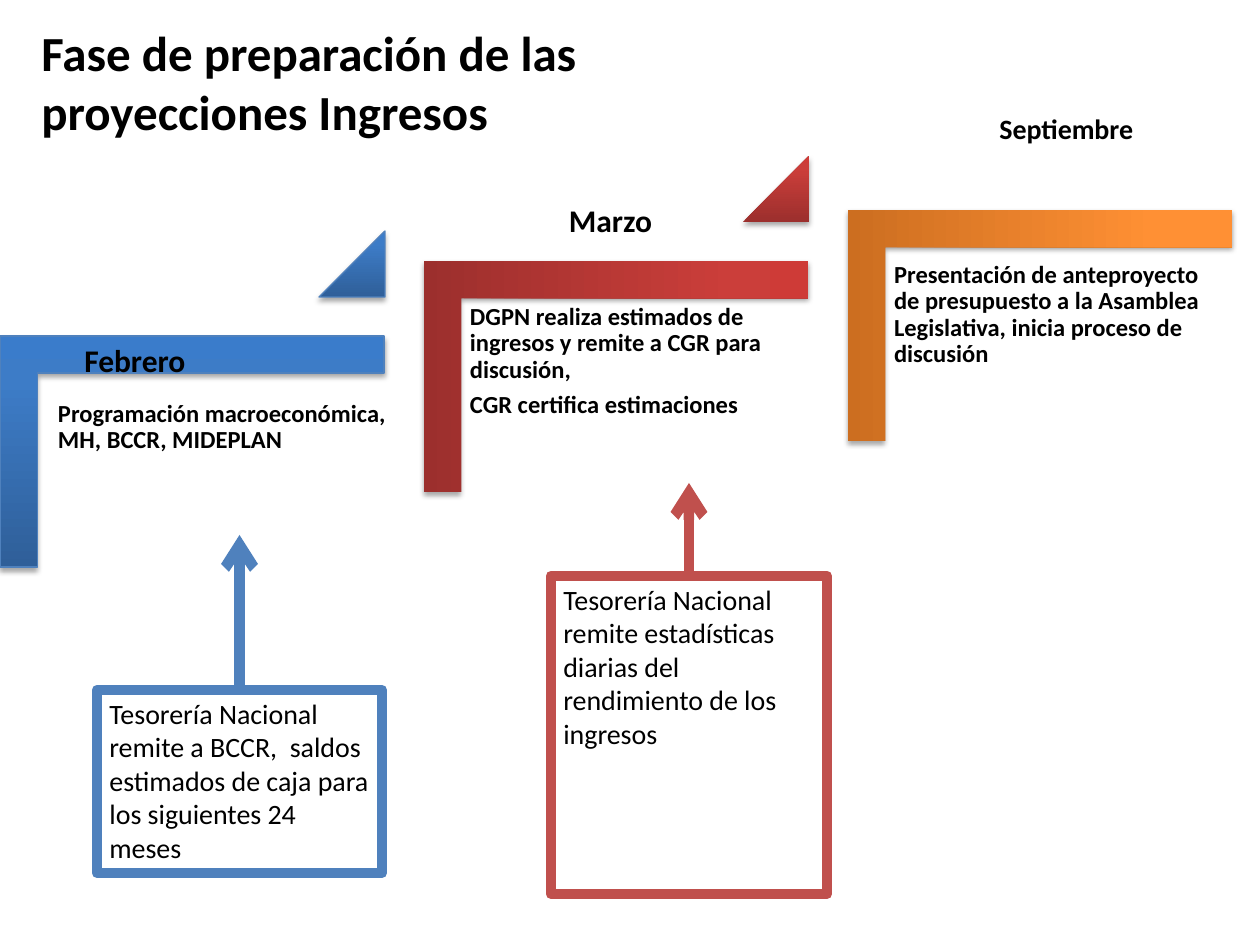
from copy import deepcopy
from dataclasses import dataclass

from lxml import etree
from pptx import Presentation
from pptx.dml.color import RGBColor
from pptx.enum.shapes import MSO_CONNECTOR, MSO_SHAPE
from pptx.enum.text import MSO_ANCHOR, PP_ALIGN
from pptx.oxml.ns import qn
from pptx.util import Emu, Pt

RECTANGLE = MSO_SHAPE.RECTANGLE
CORNER = MSO_SHAPE.CORNER
TRIANGLE = MSO_SHAPE.ISOSCELES_TRIANGLE
STRAIGHT = MSO_CONNECTOR.STRAIGHT
TOP = MSO_ANCHOR.TOP
LEFT, CENTER = PP_ALIGN.LEFT, PP_ALIGN.CENTER
EMU_PER_PX = 914400 / 126


@dataclass(frozen=True)
class Theme:
    font: str = "Calibri"
    ink: str = "000000"
    paper: str = "FFFFFF"
    blue: str = "4F81BD"
    red: str = "C0504D"
    blue_ramp: tuple = ("2F5F99", "3D7CC7", "3A7CCB")
    red_ramp: tuple = ("9C2F2D", "CB3E3A", "CE3B37")
    orange_ramp: tuple = ("CC6E20", "FF9034", "FF9136")
    title: int = 28
    heading: int = 18
    note: int = 16
    body: int = 14


THEME = Theme()
RAMP_POSITIONS = (0, 0.8, 1)
STEP_PITCH, STEP_WIDTH, STEP_HEIGHT = 424, 384, 231


def px(value):
    return Emu(round(value * EMU_PER_PX))


def color(value):
    return RGBColor.from_string(value)


def write_text(shape, text, size, bold=False, align=LEFT, inset=None,
               line_spacing=None, space_after=0):
    frame = shape.text_frame
    frame.word_wrap = True
    frame.vertical_anchor = TOP
    if inset is not None:
        frame.margin_left = frame.margin_right = px(inset)
        frame.margin_top = frame.margin_bottom = px(inset)
    for index, line in enumerate(text.split("\n")):
        para = frame.add_paragraph() if index else frame.paragraphs[0]
        para.alignment = align
        para.line_spacing = line_spacing
        para.space_after = Pt(space_after)
        span = para.add_run()
        span.text = line
        span.font.name = THEME.font
        span.font.size = Pt(size)
        span.font.bold = bold
        span.font.color.rgb = color(THEME.ink)


def add_text(page, box, text, size, **text_format):
    shape = page.shapes.add_textbox(*map(px, box))
    write_text(shape, text, size, **text_format)


def add_soft_shadow(shape):
    shape.shadow.inherit = False
    effects = shape._element.spPr.find(qn("a:effectLst"))
    shadow = etree.SubElement(effects, qn("a:outerShdw"), blurRad=str(Pt(3.1)),
                              dist=str(Pt(1.8)), dir="5400000", rotWithShape="0")
    tint = etree.SubElement(shadow, qn("a:srgbClr"), val=THEME.ink)
    etree.SubElement(tint, qn("a:alpha"), val="35000")


def add_ramp_shape(page, kind, box, ramp, outline, adjustments, rotation=0):
    shape = page.shapes.add_shape(kind, *map(px, box))
    shape.rotation = rotation
    for index, value in enumerate(adjustments):
        shape.adjustments[index] = value
    shape.fill.gradient()
    shape.fill.gradient_angle = 90
    gradient = shape._element.spPr.find(qn("a:gradFill"))
    gradient.set("rotWithShape", "0" if outline else "1")
    stops = gradient.find(qn("a:gsLst"))
    stops.append(deepcopy(stops[-1]))
    for stop, position, value in zip(shape.fill.gradient_stops, RAMP_POSITIONS, ramp):
        stop.position = position
        stop.color.rgb = color(value)
    if outline:
        shape.line.color.rgb = color(outline)
        shape.line.width = Pt(0.75)
    else:
        shape.line.fill.background()
    add_soft_shadow(shape)


def add_step(page, left, top, ramp, text, text_box, outline=None, has_triangle=True):
    shift = (STEP_WIDTH - STEP_HEIGHT) / 2
    corner_box = (left + shift, top - shift, STEP_HEIGHT, STEP_WIDTH)
    add_ramp_shape(page, CORNER, corner_box, ramp, outline, (0.161, 0.161), 90)
    across, down, height = text_box
    add_text(page, (left + across, top + down, 346, height), text, THEME.body,
             bold=True, inset=8, line_spacing=0.9, space_after=5)
    if has_triangle:
        add_ramp_shape(page, TRIANGLE, (left + 319, top - 105, 66, 66), ramp, outline, (1,))


def add_note(page, box, text, accent, arrow_top):
    left, top, width, _ = box
    note = page.shapes.add_shape(RECTANGLE, *map(px, box))
    note.shadow.inherit = False
    note.fill.solid()
    note.fill.fore_color.rgb = color(THEME.paper)
    write_text(note, text, THEME.note)
    middle = left + width / 2
    arrow = page.shapes.add_connector(
        STRAIGHT, px(middle), px(top), px(middle), px(arrow_top))
    for shape in (note, arrow):
        shape.line.color.rgb = color(accent)
        shape.line.width = Pt(6)
    etree.SubElement(arrow.line._get_or_add_ln(), qn("a:tailEnd"), type="arrow")
    etree.SubElement(arrow._element.spPr, qn("a:effectLst"))


def main():
    deck = Presentation()
    deck.slide_width, deck.slide_height = px(1260), px(945)
    page = deck.slides.add_slide(deck.slide_layouts[6])

    add_step(page, 0, 336, THEME.blue_ramp,
             "Programación macroeconómica, MH, BCCR, MIDEPLAN",
             (50, 57, 120), outline=THEME.blue)
    add_step(page, STEP_PITCH, 261, THEME.red_ramp,
             "DGPN realiza estimados de ingresos y remite a CGR para discusión,\n"
             "CGR certifica estimaciones", (38, 35, 244))
    add_step(page, 2 * STEP_PITCH, 210, THEME.orange_ramp,
             "Presentación de anteproyecto de presupuesto a la Asamblea Legislativa, "
             "inicia proceso de discusión", (38, 44, 197), has_triangle=False)

    add_note(page, (97, 690, 285, 183),
             "Tesorería Nacional remite a BCCR,  saldos estimados de caja "
             "para los siguientes 24 meses", THEME.blue, 535)
    add_note(page, (551, 576, 276, 318),
             "Tesorería Nacional remite estadísticas diarias del rendimiento "
             "de los ingresos", THEME.red, 483)

    for text, box, size in (
        ("Febrero ", (69, 335, 139, 50), THEME.heading),
        ("Marzo", (541, 195, 139, 50), THEME.heading),
        ("Septiembre ", (980, 105, 179, 47), THEME.note),
    ):
        add_text(page, box, text, size, bold=True, align=CENTER)
    add_text(page, (29, 16, 798, 131),
             "Fase de preparación de las proyecciones Ingresos", THEME.title, bold=True)
    deck.save("out.pptx")


if __name__ == "__main__":
    main()
